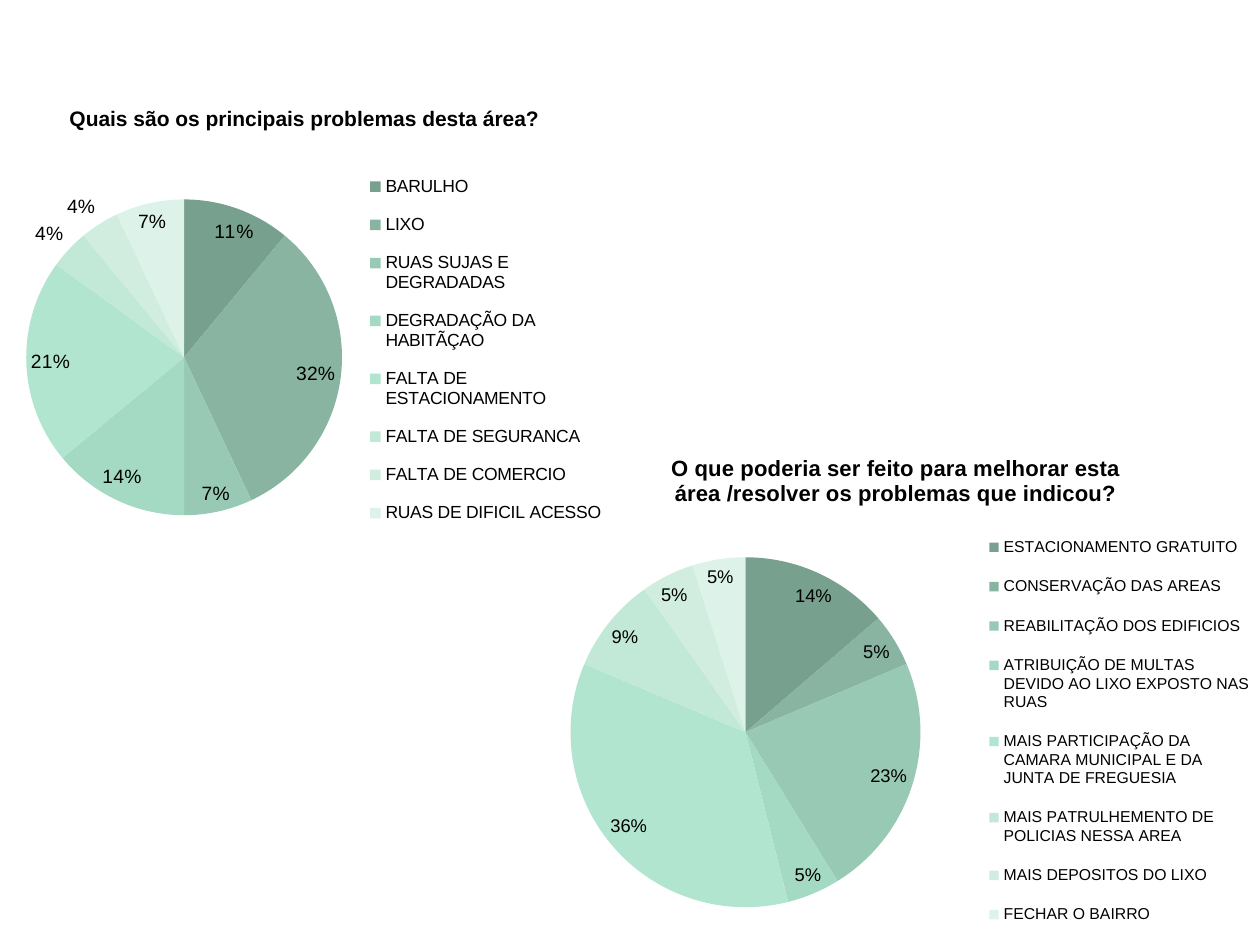
from lxml import etree
from pptx import Presentation
from pptx.chart.data import CategoryChartData
from pptx.dml.color import RGBColor
from pptx.enum.chart import XL_CHART_TYPE, XL_LABEL_POSITION, XL_LEGEND_POSITION
from pptx.oxml.ns import qn
from pptx.util import Pt

PIE = XL_CHART_TYPE.PIE
RIGHT = XL_LEGEND_POSITION.RIGHT
BEST_FIT = XL_LABEL_POSITION.BEST_FIT
PERCENT = '0"%"'
BLACK = "000000"
GREENS = ["77A08E", "88B4A1", "98C9B4", "A4DAC4",
          "B2E5D0", "C2E9D8", "D0EDDF", "DDF2E9"]

CHARTS = [
    {
        "title": "Quais são os principais problemas desta área?",
        "answers": [
            ("BARULHO", 11),
            ("LIXO", 32),
            ("RUAS SUJAS E DEGRADADAS", 7),
            ("DEGRADAÇÃO DA HABITÃÇAO", 14),
            ("FALTA DE ESTACIONAMENTO", 21),
            ("FALTA DE SEGURANCA", 4),
            ("FALTA DE COMERCIO", 4),
            ("RUAS DE DIFICIL ACESSO", 7),
        ],
        "area": (-1.5, 49, 354, 281.5),
        "title_at": (39, 9),
        "pie_at": (16.5, 65, 180.5, 180.5),
        "legend_at": (210, 41.5, 138, 219),
        "sizes": {"title": 12, "labels": 11, "legend": 10},
    },
    {
        "title": "O que poderia ser feito para melhorar esta\n"
                 "área /resolver os problemas que indicou?",
        "answers": [
            ("ESTACIONAMENTO GRATUITO", 14),
            ("CONSERVAÇÃO DAS AREAS", 5),
            ("REABILITAÇÃO DOS EDIFICIOS", 23),
            ("ATRIBUIÇÃO DE MULTAS DEVIDO AO LIXO EXPOSTO NAS RUAS", 5),
            ("MAIS PARTICIPAÇÃO DA CAMARA MUNICIPAL E DA JUNTA DE FREGUESIA", 36),
            ("MAIS PATRULHEMENTO DE POLICIAS NESSA AREA", 9),
            ("MAIS DEPOSITOS DO LIXO", 5),
            ("FECHAR O BAIRRO", 5),
        ],
        "area": (303, 247.5, 417, 292.5),
        "title_at": (78.3, 10),
        "pie_at": (23, 71, 200, 200),
        "legend_at": (260, 48, 153, 244.5),
        "sizes": {"title": 12.6, "labels": 10.5, "legend": 9},
    },
]


def color(value):
    return RGBColor.from_string(value)


def style(font, size, bold=False):
    font.name = "Arial"
    font.size = Pt(size)
    font.bold = bold
    font.color.rgb = color(BLACK)


def write_title(frame, text, size, bold):
    frame.text = text
    for para in frame.paragraphs:
        for span in para.runs:
            style(span.font, size, bold)


def place(parent, index, position, area, inner=False):
    for old in parent.findall(qn("c:layout")):
        parent.remove(old)
    layout = etree.Element(qn("c:layout"))
    manual = etree.SubElement(layout, qn("c:manualLayout"))
    settings = [("layoutTarget", "inner")] if inner else []
    settings += [("xMode", "edge"), ("yMode", "edge")]
    settings += [(name, f"{length / area[2 + number % 2]:.4f}")
                 for number, (name, length) in enumerate(zip("xywh", position))]
    for name, value in settings:
        etree.SubElement(manual, qn(f"c:{name}")).set("val", value)
    parent.insert(index, layout)


def add_pie(page, content):
    area, sizes = content["area"], content["sizes"]
    names, values = zip(*content["answers"])
    data = CategoryChartData(number_format=PERCENT)
    data.categories = names
    data.add_series("Series 1", values)
    chart = page.shapes.add_chart(PIE, *map(Pt, area), data).chart
    style(chart.font, sizes["legend"])

    chart.has_title = True
    write_title(chart.chart_title.text_frame, content["title"], sizes["title"], True)
    chart.has_legend = True
    chart.legend.position = RIGHT
    chart.legend.include_in_layout = False
    style(chart.legend.font, sizes["legend"])

    plot = chart.plots[0]
    plot.vary_by_categories = True
    plot.has_data_labels = True
    labels = plot.data_labels
    labels.show_value = True
    labels.show_percentage = False
    labels.number_format = PERCENT
    labels.number_format_is_linked = False
    labels.position = BEST_FIT
    style(labels.font, sizes["labels"])

    series = plot.series[0]
    for index, green in enumerate(GREENS):
        point = series.points[index]
        point.format.fill.solid()
        point.format.fill.fore_color.rgb = color(green)
        point.format.line.fill.background()

    root = chart.element.find(qn("c:chart"))
    place(root.find(qn("c:title")), 1, content["title_at"], area)
    place(root.find(qn("c:plotArea")), 0, content["pie_at"], area, inner=True)
    place(root.find(qn("c:legend")), 1, content["legend_at"], area)


def main():
    deck = Presentation()
    deck.slide_width, deck.slide_height = Pt(720), Pt(540)
    page = deck.slides.add_slide(deck.slide_layouts[6])
    for content in CHARTS:
        add_pie(page, content)
    deck.save("out.pptx")


if __name__ == "__main__":
    main()
